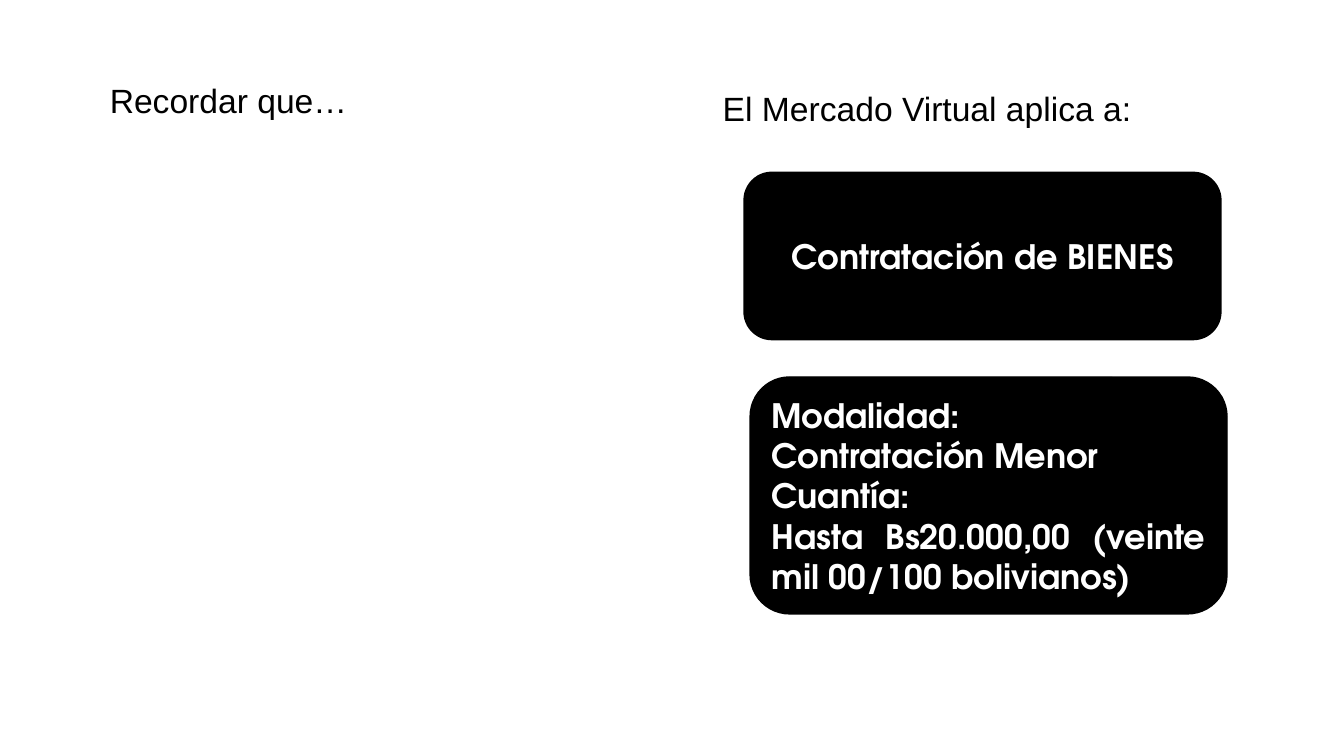
import pptx
import pptx.util
import pptx.dml.color
import pptx.enum.shapes
import pptx.enum.text

Inches = pptx.util.Inches
Align = pptx.enum.text.PP_ALIGN
Anchor = pptx.enum.text.MSO_ANCHOR


def paint(part, shade):
    """Give a fill or a font a solid colour from a hex string."""
    if hasattr(part, "solid"):
        part.solid()
        part = part.fore_color
    else:
        part = part.color
    part.rgb = pptx.dml.color.RGBColor.from_string(shade)


def write(shape, text, font, shade, bold, align, anchor):
    frame = shape.text_frame
    frame.word_wrap = True
    frame.vertical_anchor = anchor
    frame.text = text
    for para in frame.paragraphs:
        para.alignment = align
        for run in para.runs:
            run.font.name = font
            run.font.size = pptx.util.Pt(24)
            run.font.bold = bold
            paint(run.font, shade)


deck = pptx.Presentation()
deck.slide_width = Inches(13.33)
deck.slide_height = Inches(7.5)
slide = deck.slides.add_slide(deck.slide_layouts[6])

titles = [
    ("Recordar que…", (0.99, 0.74, 10.78, 0.5), Align.LEFT, Anchor.MIDDLE),
    ("El Mercado Virtual aplica a:", (7.07, 0.82, 5.04, 4.01), Align.JUSTIFY, Anchor.TOP),
]
for text, place, align, anchor in titles:
    box = slide.shapes.add_textbox(*map(Inches, place))
    write(box, text, "Arial", "000000", False, align, anchor)

terms = "\n".join([
    "Modalidad: ",
    "Contratación Menor",
    "Cuantía: ",
    "Hasta Bs20.000,00 (veinte mil 00/100 bolivianos)",
])
cards = [
    ("Contratación de BIENES", (7.38, 1.71, 4.73, 1.66), Align.CENTER),
    (terms, (7.44, 3.74, 4.73, 2.35), Align.JUSTIFY),
]
for text, place, align in cards:
    card = slide.shapes.add_shape(
        pptx.enum.shapes.MSO_SHAPE.ROUNDED_RECTANGLE, *map(Inches, place))
    card.shadow.inherit = False
    paint(card.fill, "000000")
    paint(card.line.fill, "000000")
    card.line.width = pptx.util.Pt(1)
    write(card, text, "TeX Gyre Adventor", "FFFFFF", True, align, Anchor.MIDDLE)

deck.save("out.pptx")
